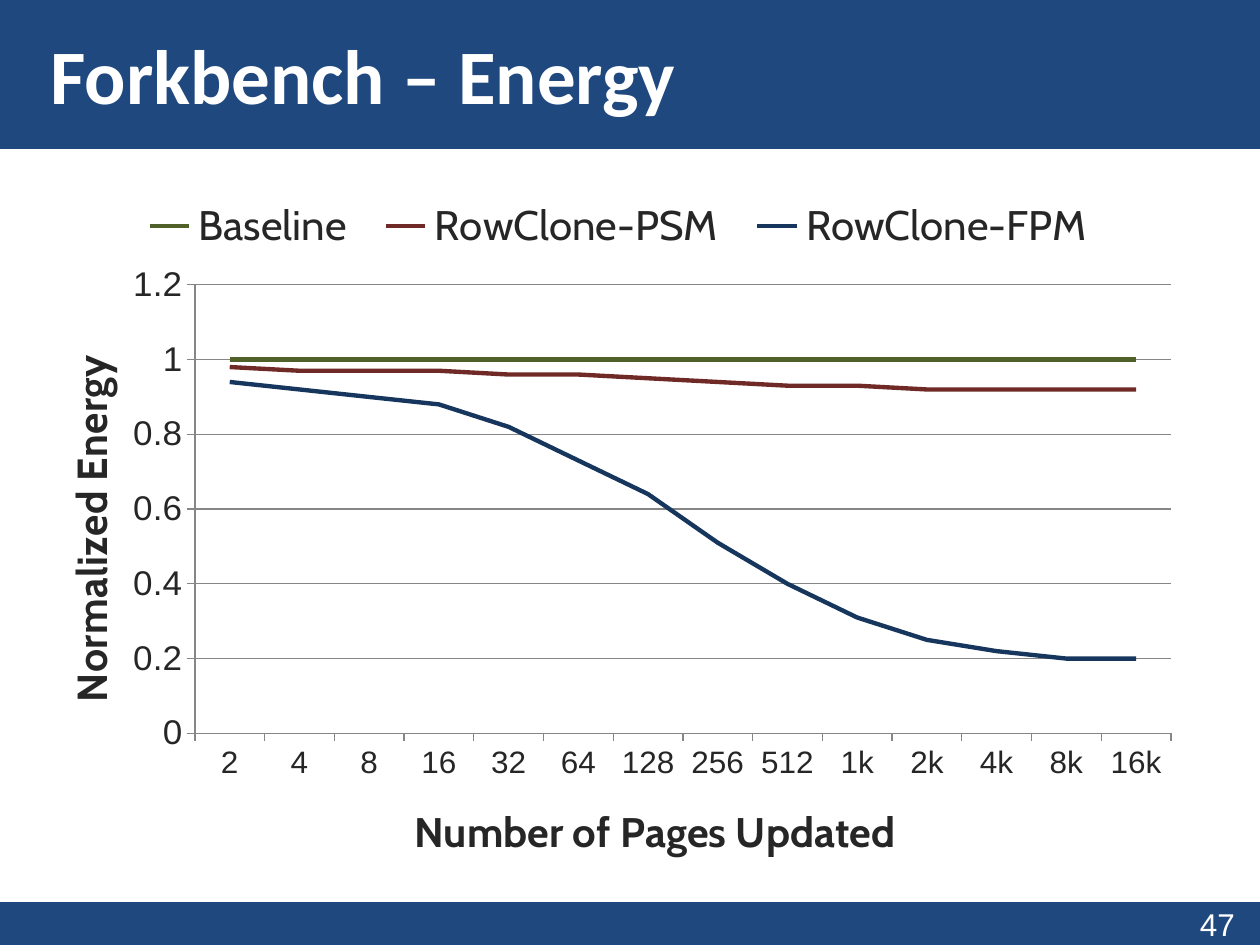
from lxml.etree import SubElement
from pptx import Presentation
from pptx.chart.data import CategoryChartData as Data
from pptx.dml.color import RGBColor as RGB
from pptx.enum.chart import XL_CHART_TYPE as Kind, XL_LEGEND_POSITION as Pos
from pptx.enum.chart import XL_MARKER_STYLE as Mark, XL_TICK_MARK as Tick
from pptx.enum.shapes import MSO_SHAPE as Shape
from pptx.enum.text import MSO_ANCHOR as Anchor, PP_ALIGN as Align
from pptx.oxml.ns import qn
from pptx.util import Inches, Pt

WIDE, HIGH = 10, 7.5
COLORS = {"navy": "1F487F", "white": "FFFFFF", "ink": "262626", "grid": "868686",
          "Baseline": "4F6128", "RowClone-PSM": "6F2926", "RowClone-FPM": "17365D"}
PAGES = ["2", "4", "8", "16", "32", "64", "128", "256", "512",
         "1k", "2k", "4k", "8k", "16k"]
ENERGY = {
    "Baseline": [1] * len(PAGES),
    "RowClone-PSM": [0.98, 0.97, 0.97, 0.97, 0.96, 0.96, 0.95,
                     0.94, 0.93, 0.93, 0.92, 0.92, 0.92, 0.92],
    "RowClone-FPM": [0.94, 0.92, 0.9, 0.88, 0.82, 0.73, 0.64,
                     0.51, 0.4, 0.31, 0.25, 0.22, 0.2, 0.2],
}


def color(name):
    return RGB.from_string(COLORS[name])


def style(font, size, face="Cabin", tone="ink", bold=False):
    font.size, font.name, font.bold = Pt(size), face, bold
    font.color.rgb = color(tone)


def write(frame, text, align=Align.LEFT, anchor=Anchor.TOP, left=0.1, right=0.1, **look):
    frame.word_wrap = True
    frame.vertical_anchor = anchor
    frame.margin_left, frame.margin_right = Inches(left), Inches(right)
    para = frame.paragraphs[0]
    para.alignment = align
    run = para.add_run()
    run.text = text
    style(run.font, **look)


def band(slide, top, high):
    box = slide.shapes.add_shape(Shape.RECTANGLE, 0, Inches(top), Inches(WIDE), Inches(high))
    box.shadow.inherit = False
    box.fill.solid()
    box.fill.fore_color.rgb = box.line.color.rgb = color("navy")
    box.line.width = Pt(2)
    return box


def place(node, index, inner=False, **spots):
    for old in node.findall(qn("c:layout")):
        node.remove(old)
    layout = SubElement(node, qn("c:layout"))
    node.insert(index, layout)
    manual = SubElement(layout, qn("c:manualLayout"))
    if inner:
        SubElement(manual, qn("c:layoutTarget"), val="inner")
    for key in "xy":
        SubElement(manual, qn(f"c:{key}Mode"), val="edge")
    for key, share in spots.items():
        SubElement(manual, qn(f"c:{key}"), val=str(share))


def set_axis(axis, title, size, **spots):
    write_title = axis.axis_title.text_frame
    write_title.text = title
    style(write_title.paragraphs[0].runs[0].font, 24, bold=True)
    style(axis.tick_labels.font, size, "Arial")
    axis.major_tick_mark, axis.minor_tick_mark = Tick.OUTSIDE, Tick.NONE
    axis.format.line.color.rgb = color("grid")
    node = write_title.paragraphs[0].runs[0].font.fill and axis.axis_title.element
    place(node, 1, **spots)


def add_graph(slide):
    data = Data()
    data.categories = PAGES
    for name, vals in ENERGY.items():
        data.add_series(name, vals)
    chart = slide.shapes.add_chart(
        Kind.LINE, Inches(WIDE / 30), Inches(1.33),
        Inches(WIDE * 14 / 15), Inches(5.58), data).chart
    style(chart.font, 10)
    chart.has_title = False
    chart.has_legend = True
    legend = chart.legend
    legend.position, legend.include_in_layout = Pos.RIGHT, False
    style(legend.font, 24)
    set_axis(chart.category_axis, "Number of Pages Updated", 18, x=0.31, y=0.91)
    rise = chart.value_axis
    set_axis(rise, "Normalized Energy", 20, x=0.01, y=0.27)
    rise.minimum_scale, rise.maximum_scale, rise.major_unit = 0, 1.2, 0.2
    rise.has_major_gridlines = True
    rise.major_gridlines.format.line.color.rgb = color("grid")
    plot = chart.plots[0]
    plot.vary_by_categories = False
    for line in plot.series:
        line.smooth = False
        line.marker.style = Mark.NONE
        line.format.line.color.rgb = color(line.name)
        line.format.line.width = Pt(2.5)
    root = chart.element
    place(root.find(".//" + qn("c:plotArea")), 0, True, x=0.13, y=0.17, w=0.83, h=0.65)
    place(root.find(".//" + qn("c:legend")), 1, x=0.07, y=0.04, w=0.84, h=0.09)


def main():
    deck = Presentation()
    deck.slide_width, deck.slide_height = Inches(WIDE), Inches(HIGH)
    slide = deck.slides.add_slide(deck.slide_layouts[6])
    band(slide, 7.17, 0.33)
    page = slide.shapes.add_textbox(Inches(7.67), Inches(7.13), Inches(2.33), Inches(0.33))
    write(page.text_frame, "47", Align.RIGHT, right=0.2, size=18, face="Arial", tone="white")
    head = band(slide, 0, 1.17)
    write(head.text_frame, "Forkbench – Energy", anchor=Anchor.MIDDLE, left=0.4,
          size=44, face="Calibri", tone="white", bold=True)
    add_graph(slide)
    deck.save("out.pptx")


if __name__ == "__main__":
    main()
